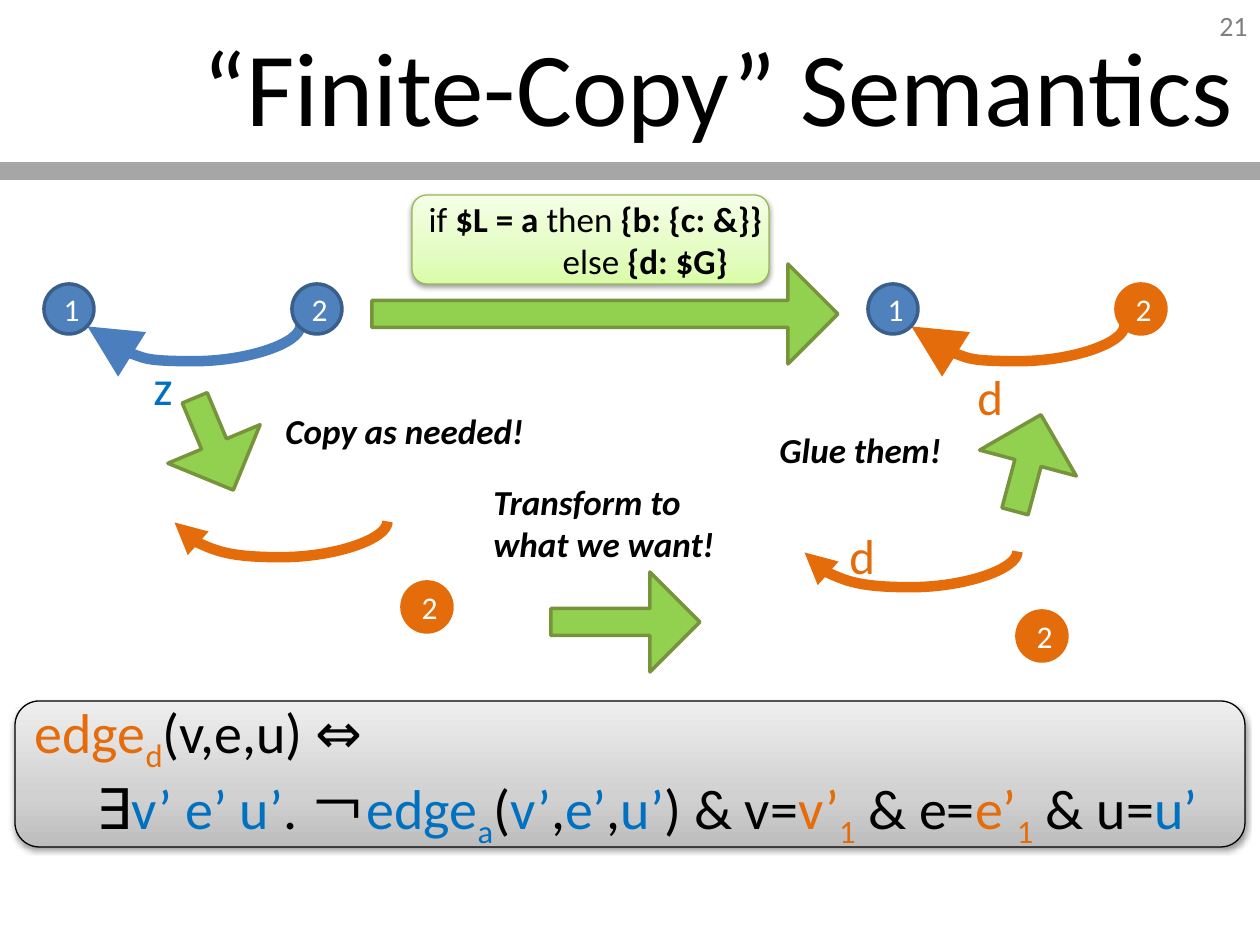
from dataclasses import dataclass

from lxml.etree import SubElement as Sub
from pptx import Presentation
from pptx.dml.color import RGBColor
from pptx.enum.shapes import MSO_CONNECTOR as Link, MSO_SHAPE as Kind
from pptx.enum.text import MSO_ANCHOR as Anchor, MSO_AUTO_SIZE as Fit, PP_ALIGN as Align
from pptx.oxml.ns import qn
from pptx.util import Emu, Pt

SCALE = 914400 / 126


@dataclass(frozen=True)
class Theme:
    font: str = "Calibri"
    black: str = "000000"
    white: str = "FFFFFF"
    gray: str = "808080"
    rule: str = "A6A6A6"
    blue: str = "0070C0"
    orange: str = "E46C0A"
    node: str = "4F81BD"
    rim: str = "3A5F8C"
    curve: str = "4B7EBC"
    green: str = "92D050"
    edge: str = "77933C"
    lime: str = "98B955"
    limes: tuple = ("DAFDA7", "E4FCC2", "F5FFE7")
    grays: tuple = ("BDBDBD", "D1D1D1", "EEEEEE")
    title: int = 60
    math: int = 32
    label: int = 28
    note: int = 20
    digit: int = 18
    page: int = 16


T = Theme()


def px(n):
    return Emu(round(n * SCALE))


def rgb(code):
    return RGBColor.from_string(code)


def put(para, text, size, color=T.black, bold=False, italic=False, sub=False):
    run = para.add_run()
    run.text = text
    font = run.font
    font.name, font.size = T.font, Pt(size)
    font.bold, font.italic = bold, italic
    font.color.rgb = rgb(color)
    if sub:
        font._element.set("baseline", "-25000")


def line(shape, color, width):
    shape.line.color.rgb = rgb(color)
    shape.line.width = Pt(width)


def label(slide, box, text, size, color=T.black, wrap=True, align=Align.LEFT,
          anchor=Anchor.TOP, **style):
    frame = slide.shapes.add_textbox(*map(px, box)).text_frame
    frame.word_wrap = wrap
    frame.vertical_anchor = anchor
    for i, part in enumerate(text.split("\n")):
        para = frame.add_paragraph() if i else frame.paragraphs[0]
        para.alignment = align
        put(para, part, size, color, **style)


def shape(slide, kind, box, fill, rim, width=2):
    form = slide.shapes.add_shape(kind, *map(px, box))
    form.shadow.inherit = False
    form.fill.solid()
    form.fill.fore_color.rgb = rgb(fill)
    line(form, rim, width)
    return form


def node(slide, x, y, text, fill, rim):
    frame = shape(slide, Kind.OVAL, (x, y, 50, 50), fill, rim).text_frame
    frame.vertical_anchor = Anchor.MIDDLE
    para = frame.paragraphs[0]
    para.alignment = Align.CENTER
    put(para, text, T.digit, T.white)


def arrow(slide, box, turn=0):
    form = shape(slide, Kind.RIGHT_ARROW, box, T.green, T.edge)
    form.adjustments[0], form.adjustments[1] = 0.27, 0.5
    form.rotation = turn


def curve(slide, x, y, color, head):
    """Bowed arrow that starts at (x, y) and ends a span further left."""
    span, bow = 213, 36
    mid, top = x - span / 2, y - span / 2
    link = slide.shapes.add_connector(
        Link.CURVE, px(mid), px(top), px(mid + 1), px(top + span))
    line(link, color, 6)
    props = link._element.spPr
    props.find(qn("a:xfrm")).set("rot", "5400000")
    Sub(props.find(".//" + qn("a:avLst")), qn("a:gd"),
        name="adj1", fmla=f"val {bow * 100000}")
    Sub(props.find(qn("a:ln")), qn("a:tailEnd"), type="triangle", w=head, len=head)
    Sub(props, qn("a:effectLst"))


def panel(slide, box, stops, rim, size, rows):
    """Shaded round box; each row is an indent and its runs."""
    form = shape(slide, Kind.ROUNDED_RECTANGLE, box, T.white, rim, 0.75)
    form.fill.gradient()
    form.fill.gradient_angle = 90
    props = form._element.spPr
    ramp = props.find(".//" + qn("a:gsLst"))
    ramp.clear()
    for pos, color in zip((0, 35, 100), stops):
        stop = Sub(ramp, qn("a:gs"), pos=str(pos * 1000))
        Sub(stop, qn("a:srgbClr"), val=color)
    glow = Sub(props.find(qn("a:effectLst")), qn("a:outerShdw"), blurRad="40000",
               dist="20000", dir="5400000", rotWithShape="0")
    tint = Sub(glow, qn("a:srgbClr"), val=T.black)
    Sub(tint, qn("a:alpha"), val="38000")

    frame = form.text_frame
    frame.word_wrap = False
    frame.vertical_anchor = Anchor.MIDDLE
    for i, (indent, runs) in enumerate(rows):
        para = frame.add_paragraph() if i else frame.paragraphs[0]
        para.alignment = Align.LEFT
        if indent:
            para._p.get_or_add_pPr().set("marL", str(px(indent)))
        for text, style in runs:
            put(para, text, size, **style)


def head(slide):
    label(slide, (966, 0, 294, 50), "21", T.page, T.gray,
          align=Align.RIGHT, anchor=Anchor.MIDDLE)
    rule = slide.shapes.add_connector(Link.STRAIGHT, 0, px(171), px(1260), px(171))
    line(rule, T.rule, 10)
    Sub(rule._element.spPr, qn("a:effectLst"))
    title = slide.shapes.title
    title.left, title.top, title.width, title.height = map(px, (44, 5, 1202, 158))
    frame = title.text_frame
    frame.auto_size = Fit.NONE
    frame.vertical_anchor = Anchor.MIDDLE
    frame.paragraphs[0].alignment = Align.RIGHT
    put(frame.paragraphs[0], "“Finite-Copy” Semantics", T.title)


def graphs(slide):
    for x, y, color, size in ((1124, 326, T.orange, "lg"), (300, 326, T.curve, "lg"),
                              (387, 522, T.orange, "med"), (1017, 552, T.orange, "med")):
        curve(slide, x, y, color, size)
    for x, y, text in ((868, 284, "1"), (44, 284, "1"), (292, 284, "2")):
        node(slide, x, y, text, T.node, T.rim)
    for x, y in ((1116, 284), (402, 582), (1017, 611)):
        node(slide, x, y, "2", T.orange, T.orange)
    for x, y, text, color in ((965, 360, "d", T.orange), (141, 350, "z", T.blue),
                              (837, 519, "d", T.orange)):
        label(slide, (x, y, 52, 72), text, T.label, color, wrap=False)


def steps(slide):
    for box, turn in (((372, 264, 466, 100), 0), ((164, 394, 100, 100), 67.3),
                      ((551, 572, 149, 100), 0), ((978, 413, 100, 100), 285)):
        arrow(slide, box, turn)
    for box, text in (((273, 403, 268, 55), "Copy as needed!"),
                      ((481, 474, 258, 97), "Transform to\nwhat we want!"),
                      ((767, 422, 198, 55), "Glue them!")):
        label(slide, box, text, T.note, bold=True, italic=True)


def rules(slide):
    bold, plain = {"bold": True}, {}
    panel(slide, (412, 195, 357, 89), T.limes, T.lime, T.note, (
        (0, (("if ", plain), ("$L = a", bold), (" then ", plain), ("{b: {c: &}}", bold))),
        (134, (("else ", plain), ("{d: $G}", bold)))))
    blue, warm = {"color": T.blue}, {"color": T.orange}
    low, hot = {**blue, "sub": True}, {**warm, "sub": True}
    panel(slide, (15, 701, 1230, 146), T.grays, T.black, T.math, (
        (0, (("edge", warm), ("d", hot), ("(v,e,u) ⇔", plain))),
        (62, (("∃", plain), ("v’ e’ u’", blue), (". ￢", plain), ("edge", blue),
              ("a", low), ("(", plain), ("v’", blue), (",", plain), ("e’", blue),
              (",", plain), ("u’", blue), (") & v=", plain), ("v’", warm), ("1", hot),
              (" & e=", plain), ("e’", warm), ("1", hot), (" & u=", plain),
              ("u’", blue)))))


def main():
    deck = Presentation()
    deck.slide_width, deck.slide_height = px(1260), px(945)
    slide = deck.slides.add_slide(deck.slide_layouts[5])
    head(slide)
    graphs(slide)
    steps(slide)
    rules(slide)
    deck.save("out.pptx")


if __name__ == "__main__":
    main()
